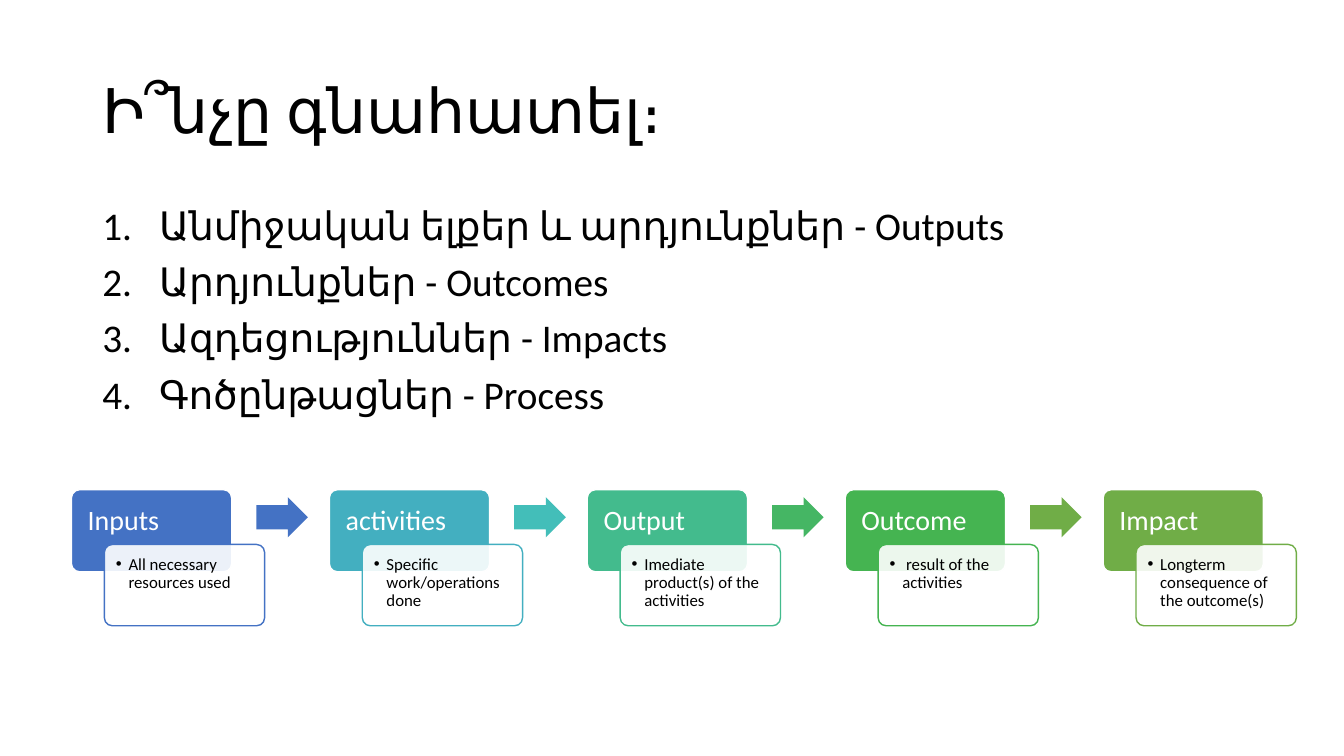
from lxml import etree
from pptx import Presentation
from pptx import util as u
from pptx.dml.color import RGBColor
from pptx.enum import shapes, text
from pptx.oxml.ns import qn

FONT = "Calibri"
COLORS = {
    "ink": "000000", "paper": "FFFFFF",
    "inputs": "4472C4", "activities": "43AFC0", "output": "43BB8D",
    "outcome": "45B451", "impact": "70AD47",
    "to_activities": "4472C4", "to_output": "43BEB9",
    "to_outcome": "45B664", "to_impact": "70AD47",
}
TITLE = "Ի՞նչը գնահատել։"
QUESTIONS = [
    "Անմիջական ելքեր և արդյունքներ - Outputs",
    "Արդյունքներ - Outcomes",
    "Ազդեցություններ - Impacts",
    "Գոծընթացներ - Process",
]
STAGES = [
    ("Inputs", "All necessary resources used", "inputs", "to_activities"),
    ("activities", "Specific work/operations done", "activities", "to_output"),
    ("Output", "Imediate product(s) of the activities", "output", "to_outcome"),
    ("Outcome", " result of the activities", "outcome", "to_impact"),
    ("Impact", "Longterm consequence of the outcome(s)", "impact", None),
]
STAGE_STEP = 6.5


def rgb(name):
    return RGBColor.from_string(COLORS[name])


def set_margins(frame, left, top, right, bottom):
    frame.margin_left, frame.margin_top = u.Cm(left), u.Cm(top)
    frame.margin_right, frame.margin_bottom = u.Cm(right), u.Cm(bottom)


def style_paragraph(para, size, color):
    para.alignment = text.PP_ALIGN.LEFT
    para.line_spacing = 0.9
    for span in para.runs:
        span.font.name = FONT
        span.font.size = u.Pt(size)
        span.font.color.rgb = rgb(color)


def add_marker(para, indent, tag, **attributes):
    properties = para._p.get_or_add_pPr()
    properties.set("marL", str(u.Cm(indent)))
    properties.set("indent", str(-u.Cm(indent)))
    font = etree.SubElement(properties, qn("a:buFont"))
    font.set("typeface", "Arial" if tag == "a:buChar" else "+mj-lt")
    marker = etree.SubElement(properties, qn(tag))
    for key, value in attributes.items():
        marker.set(key, value)


def add_text_box(page, left, top, width, height):
    box = page.shapes.add_textbox(u.Cm(left), u.Cm(top), u.Cm(width), u.Cm(height))
    box.text_frame.word_wrap = True
    return box.text_frame


def add_block(page, kind, left, top, width, height, fill, line=None):
    block = page.shapes.add_shape(kind, u.Cm(left), u.Cm(top), u.Cm(width), u.Cm(height))
    block.shadow.inherit = False
    block.fill.solid()
    block.fill.fore_color.rgb = rgb(fill)
    if line:
        block.line.color.rgb = rgb(line)
        block.line.width = u.Pt(1)
    else:
        block.line.fill.background()
    block.text_frame.word_wrap = True
    block.text_frame.vertical_anchor = text.MSO_ANCHOR.TOP
    return block


def add_title(page, left, top, width, height):
    frame = add_text_box(page, left, top, width, height)
    frame.vertical_anchor = text.MSO_ANCHOR.MIDDLE
    frame.text = TITLE
    style_paragraph(frame.paragraphs[0], 44, "ink")


def add_questions(page, left, top, width, height):
    frame = add_text_box(page, left, top, width, height)
    frame.text = "\n".join(QUESTIONS)
    for para in frame.paragraphs:
        style_paragraph(para, 28, "ink")
        para.space_before = u.Pt(10)
        add_marker(para, 1.43, "a:buAutoNum", type="arabicPeriod")


def add_stage(page, left, top, heading, detail, color, arrow_color):
    rounded = shapes.MSO_SHAPE.ROUNDED_RECTANGLE
    header = add_block(page, rounded, left, top, 4.04, 2.07, color, "paper")
    header.adjustments[0] = 0.1
    set_margins(header.text_frame, 0.35, 0.35, 0.35, 0.2)
    header.text_frame.text = heading
    style_paragraph(header.text_frame.paragraphs[0], 20, "paper")

    card = add_block(page, rounded, left + 0.83, top + 1.38, 4.04, 2.05, "paper", color)
    card.adjustments[0] = 0.1
    tint = card.fill._xPr.find(qn("a:solidFill"))[0]
    etree.SubElement(tint, qn("a:alpha")).set("val", "90000")
    set_margins(card.text_frame, 0.23, 0.23, 0.23, 0.23)
    card.text_frame.text = detail
    para = card.text_frame.paragraphs[0]
    style_paragraph(para, 12, "ink")
    add_marker(para, 0.32, "a:buChar", char="•")

    if arrow_color:
        arrow = add_block(page, shapes.MSO_SHAPE.RIGHT_ARROW,
                          left + 4.66, top + 0.19, 1.3, 1.01, arrow_color)
        arrow.adjustments[0] = 0.6
        arrow.adjustments[1] = 0.5


def add_results_chain(page, left, top):
    for index, stage in enumerate(STAGES):
        add_stage(page, left + index * STAGE_STEP, top, *stage)


def main():
    deck = Presentation()
    deck.slide_width, deck.slide_height = u.Cm(33.87), u.Cm(19.05)
    page = deck.slides.add_slide(deck.slide_layouts[6])
    add_title(page, 2.33, 1.01, 29.21, 3.68)
    add_questions(page, 2.33, 5.07, 29.21, 12.09)
    add_results_chain(page, 1.8, 12.34)
    deck.save("out.pptx")


if __name__ == "__main__":
    main()
